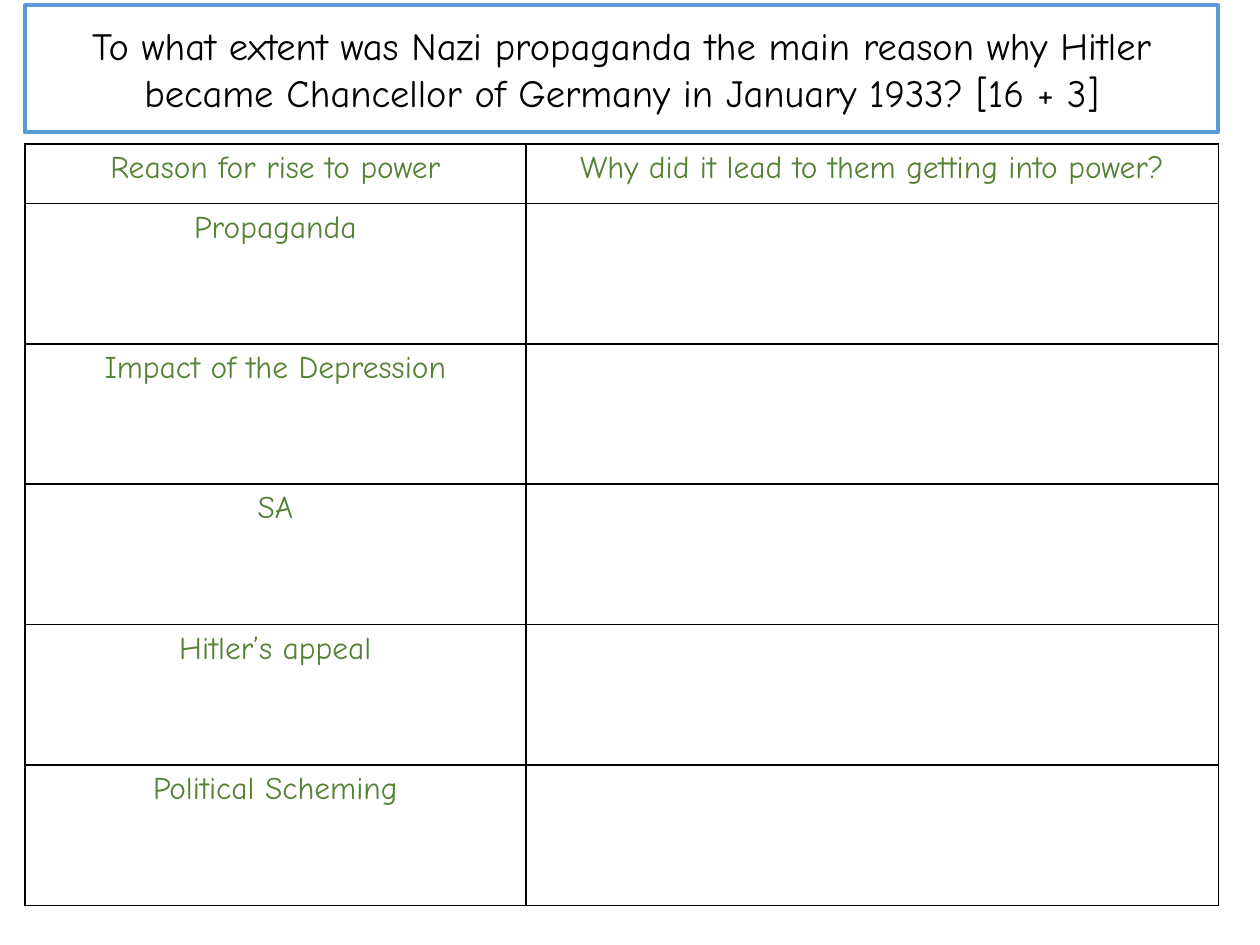
from dataclasses import dataclass

from lxml.etree import SubElement
from pptx import Presentation
from pptx.dml.color import RGBColor
from pptx.enum.shapes import MSO_SHAPE
from pptx.enum.text import MSO_ANCHOR, PP_ALIGN
from pptx.oxml.ns import qn
from pptx.util import Cm, Pt

LEFT, WIDTH = Cm(0.5), Cm(24.06)
BLACK, BLUE, GREEN = "000000", "5B9BD5", "548235"
TITLE_FONT = {"name": "Comic Neue", "size": Pt(22)}
CELL_FONT = {"name": "Comic Neue", "size": Pt(18)}


@dataclass
class Row:
    reason: str
    explanation: str = ""
    height: float = 2.83


ROWS = [
    Row("Reason for rise to power",
        "Why did it lead to them getting into power?", 1.2),
    Row("Propaganda"),
    Row("Impact of the Depression"),
    Row("SA"),
    Row("Hitler’s appeal"),
    Row("Political Scheming"),
]


def rgb(value: str) -> RGBColor:
    return RGBColor.from_string(value)


def write(tf, text: str, font: dict, color: str) -> None:
    p = tf.paragraphs[0]
    p.alignment = PP_ALIGN.CENTER
    r = p.add_run()
    r.text = text
    for key, value in font.items():
        setattr(r.font, key, value)
    r.font.color.rgb = rgb(color)


def add_borders(cell, color: str) -> None:
    tc_pr = cell._tc.get_or_add_tcPr()
    for side in ("a:lnL", "a:lnR", "a:lnT", "a:lnB"):
        ln = SubElement(tc_pr, qn(side), w=str(Pt(1)))
        fill = SubElement(ln, qn("a:solidFill"))
        SubElement(fill, qn("a:srgbClr"), val=color)


def add_title(s, text: str) -> None:
    sp = s.shapes.add_shape(MSO_SHAPE.RECTANGLE, LEFT, Cm(0.1), WIDTH, Cm(2.57))
    sp.shadow.inherit = False
    sp.fill.background()
    sp.line.color.rgb = rgb(BLUE)
    sp.line.width = Pt(2.25)
    tf = sp.text_frame
    tf.word_wrap = True
    tf.vertical_anchor = MSO_ANCHOR.MIDDLE
    write(tf, text, TITLE_FONT, BLACK)


def add_reasons(s, rows: list[Row]) -> None:
    height = Cm(sum(row.height for row in rows))
    table = s.shapes.add_table(len(rows), 2, LEFT, Cm(2.9), WIDTH, height).table
    table.first_row = table.horz_banding = False
    table.columns[0].width = Cm(10.1)
    table.columns[1].width = WIDTH - Cm(10.1)
    for i, row in enumerate(rows):
        table.rows[i].height = Cm(row.height)
        for j, text in enumerate((row.reason, row.explanation)):
            cell = table.cell(i, j)
            add_borders(cell, BLACK)
            cell.fill.background()
            if text:
                write(cell.text_frame, text, CELL_FONT, GREEN)


def main() -> None:
    prs = Presentation()
    prs.slide_width, prs.slide_height = Cm(25.4), Cm(19.05)
    s = prs.slides.add_slide(prs.slide_layouts[6])
    # Question
    add_title(s, "To what extent was Nazi propaganda the main reason why Hitler "
                 "became Chancellor of Germany in January 1933? [16 + 3]")
    # Reasons to explain
    add_reasons(s, ROWS)
    prs.save("out.pptx")


if __name__ == "__main__":
    main()
